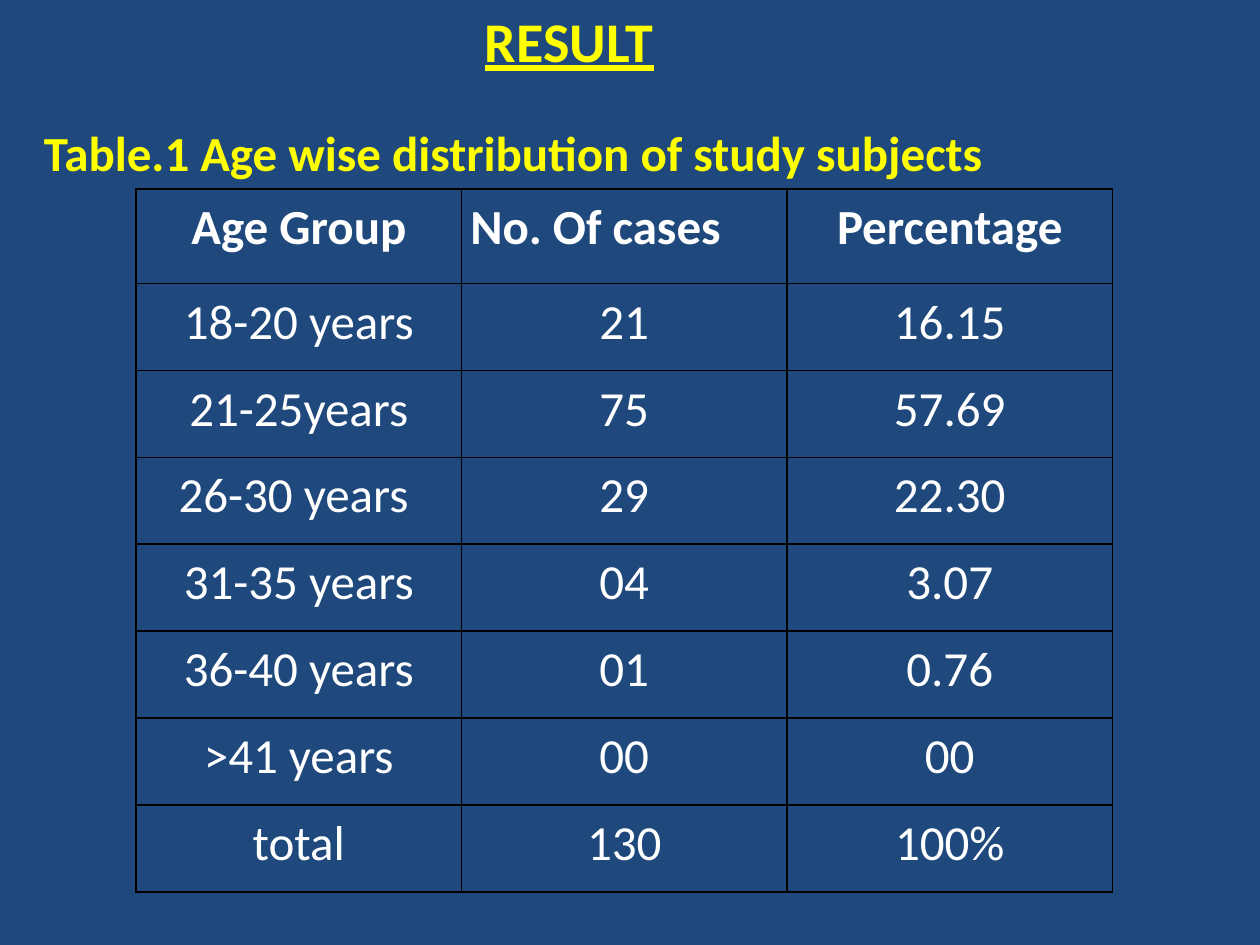
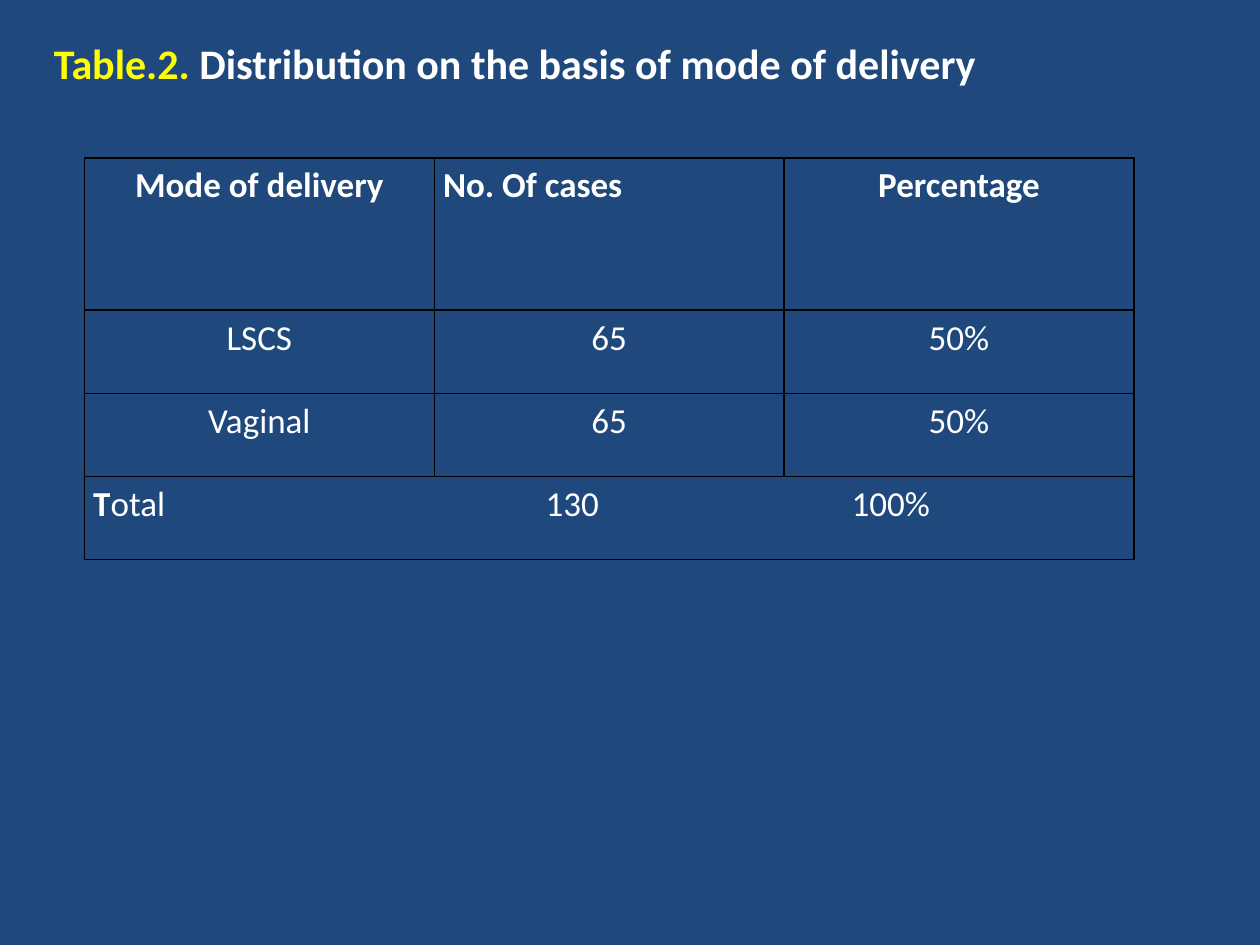
from lxml.etree import SubElement
from pptx import Presentation
from pptx.dml.color import RGBColor as RGB
from pptx.enum.text import MSO_ANCHOR as ANCHOR, PP_ALIGN as AL
from pptx.oxml import parse_xml
from pptx.oxml.ns import nsdecls, qn
from pptx.util import Inches, Pt

C = {"bg": "1F497D", "accent": "FFFF00", "text": "FFFFFF", "border": "000000"}
FONT = "Calibri"
W, H = 10, 7.5
PAD = 0.07

AGE_ROWS = [
    ("Age Group", "No. Of cases", "Percentage"),
    ("18-20 years", "21", "16.15"),
    ("21-25years", "75", "57.69"),
    ("\t26-30 years", "29", "22.30"),
    ("31-35 years", "04", "3.07"),
    ("36-40 years", "01", "0.76"),
    (">41 years", "00", "00"),
    ("total", "130", "100%"),
]
DELIVERY_ROWS = [
    ("Mode of delivery", "No. Of cases", "Percentage"),
    ("LSCS", "65", "50%"),
    ("Vaginal", "65", "50%"),
]


def add_run(p, text, size=28, color="text", bold=False, underline=False):
    r = p.add_run()
    r.text = text
    f = r.font
    f.name, f.size, f.bold, f.underline = FONT, Pt(size), bold, underline
    f.color.rgb = RGB.from_string(C[color])


def add_tabs(p, stops):
    tabs = SubElement(p._p.get_or_add_pPr(), qn("a:tabLst"))
    for pos, algn in stops:
        SubElement(tabs, qn("a:tab"), pos=str(Inches(pos)), algn=algn)


def add_slide(prs):
    s = prs.slides.add_slide(prs.slide_layouts[6])
    fill = s.background.fill
    fill.solid()
    fill.fore_color.rgb = RGB.from_string(C["bg"])
    return s


def add_heading(s, box, *runs, **fmt):
    x, y, w, h = box
    sp = s.shapes.add_textbox(*map(Inches, (x * W, y * H, w * W, h * H)))
    tf = sp.text_frame
    tf.word_wrap = True
    for text, color in runs:
        add_run(tf.paragraphs[0], text, color=color, bold=True, **fmt)


def style_cell(cell):
    cell.fill.background()
    cell.margin_left = cell.margin_right = Inches(PAD)
    cell.margin_top = cell.margin_bottom = 0
    cell.vertical_anchor = ANCHOR.TOP
    tcPr = cell._tc.get_or_add_tcPr()
    for i, side in enumerate("LRTB"):
        tcPr.insert(i, parse_xml(
            f'<a:ln{side} {nsdecls("a")} w="{Pt(1)}"><a:solidFill>'
            f'<a:srgbClr val="{C["border"]}"/></a:solidFill></a:ln{side}>'))


def add_grid(s, box, heights, rows, size, tabs=()):
    x, y, w = box
    n = len(rows[0])
    t = s.shapes.add_table(len(heights), n, Inches(x * W), Inches(y * H),
                           Inches(w * W), Inches(sum(heights))).table
    t.first_row = t.horz_banding = False
    for row, h in zip(t.rows, heights):
        row.height = Inches(h)
    for cell in t.iter_cells():
        style_cell(cell)
        cell.text_frame.paragraphs[0].line_spacing = 1.15
    for i, row in enumerate(rows):
        for j, text in enumerate(row):
            p = t.cell(i, j).text_frame.paragraphs[0]
            if text.startswith("\t"):
                add_tabs(p, tabs)
            elif (i, j) != (0, 1):
                p.alignment = AL.CENTER
            add_run(p, text, size=size, bold=i == 0)
    return t


def add_total(t, size):
    last = len(t.rows) - 1
    cell = t.cell(last, 0)
    cell.merge(t.cell(last, len(t.columns) - 1))
    p = cell.text_frame.paragraphs[0]
    add_tabs(p, [(3.59, "l"), (6.02, "l")])
    add_run(p, "T", size=size, bold=True)
    add_run(p, "otal\t130\t100%", size=size)


def age_slide(prs):
    s = add_slide(prs)
    add_heading(s, (0.375, 0, 0.25, 0.085), ("RESULT", "accent"), size=32, underline=True)
    add_grid(s, (0.108, 0.2, 0.775), [0.75] + [0.69] * 7, AGE_ROWS, 28, [(1.18, "ctr")])
    add_heading(s, (0.025, 0.123, 0.975, 0.07),
                ("Table.1 Age wise distribution of study subjects", "accent"), size=28)


def delivery_slide(prs):
    s = add_slide(prs)
    add_heading(s, (0.033, 0.033, 0.9, 0.12), ("Table.2. ", "accent"),
                ("Distribution on the basis of mode of delivery", "text"), size=24)
    t = add_grid(s, (0.067, 0.167, 0.833), [1.21] + [0.66] * 3, DELIVERY_ROWS, 20)
    add_total(t, 20)


def main():
    prs = Presentation()
    prs.slide_width, prs.slide_height = Inches(W), Inches(H)
    age_slide(prs)
    delivery_slide(prs)
    prs.save("out.pptx")


if __name__ == "__main__":
    main()
